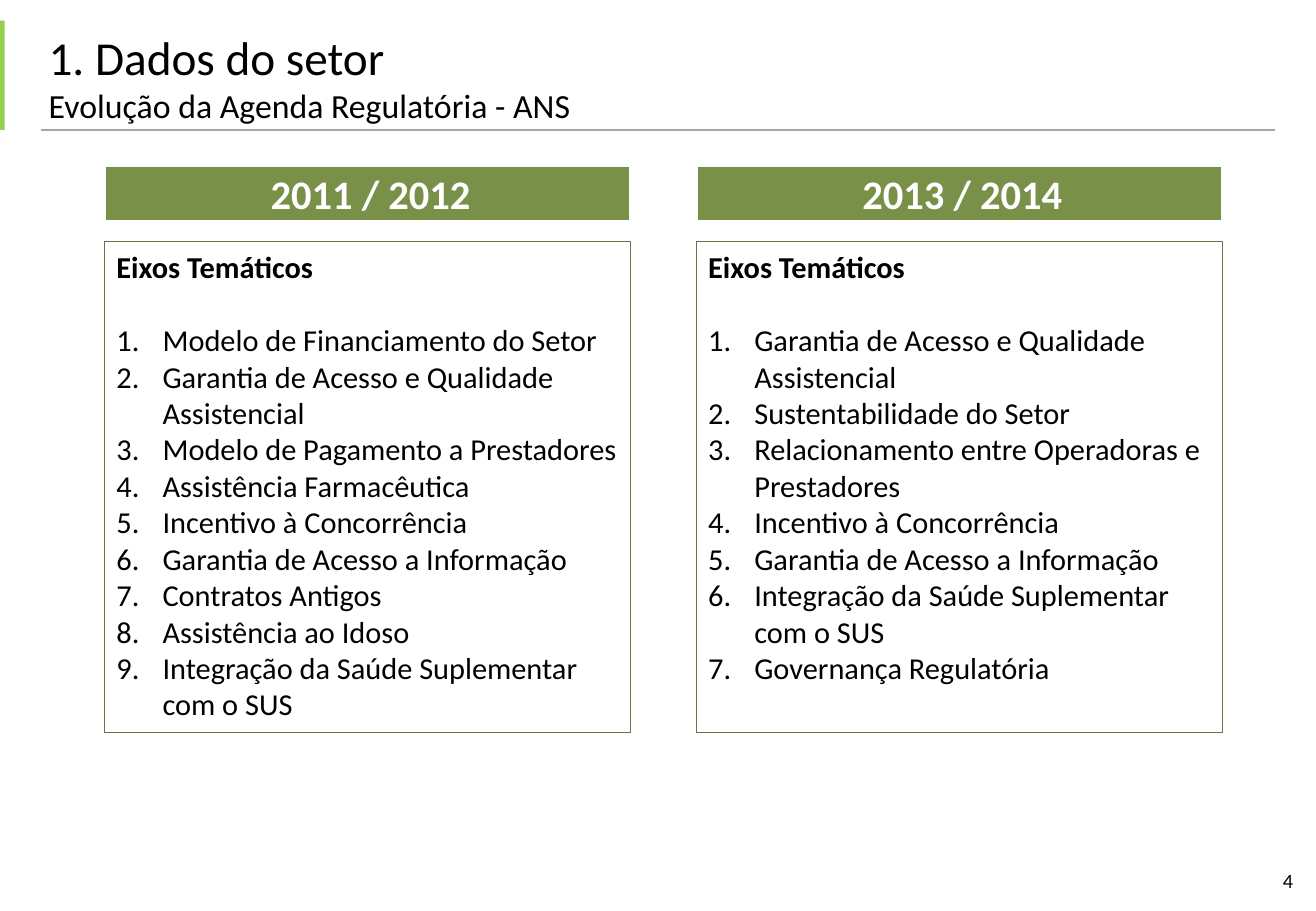
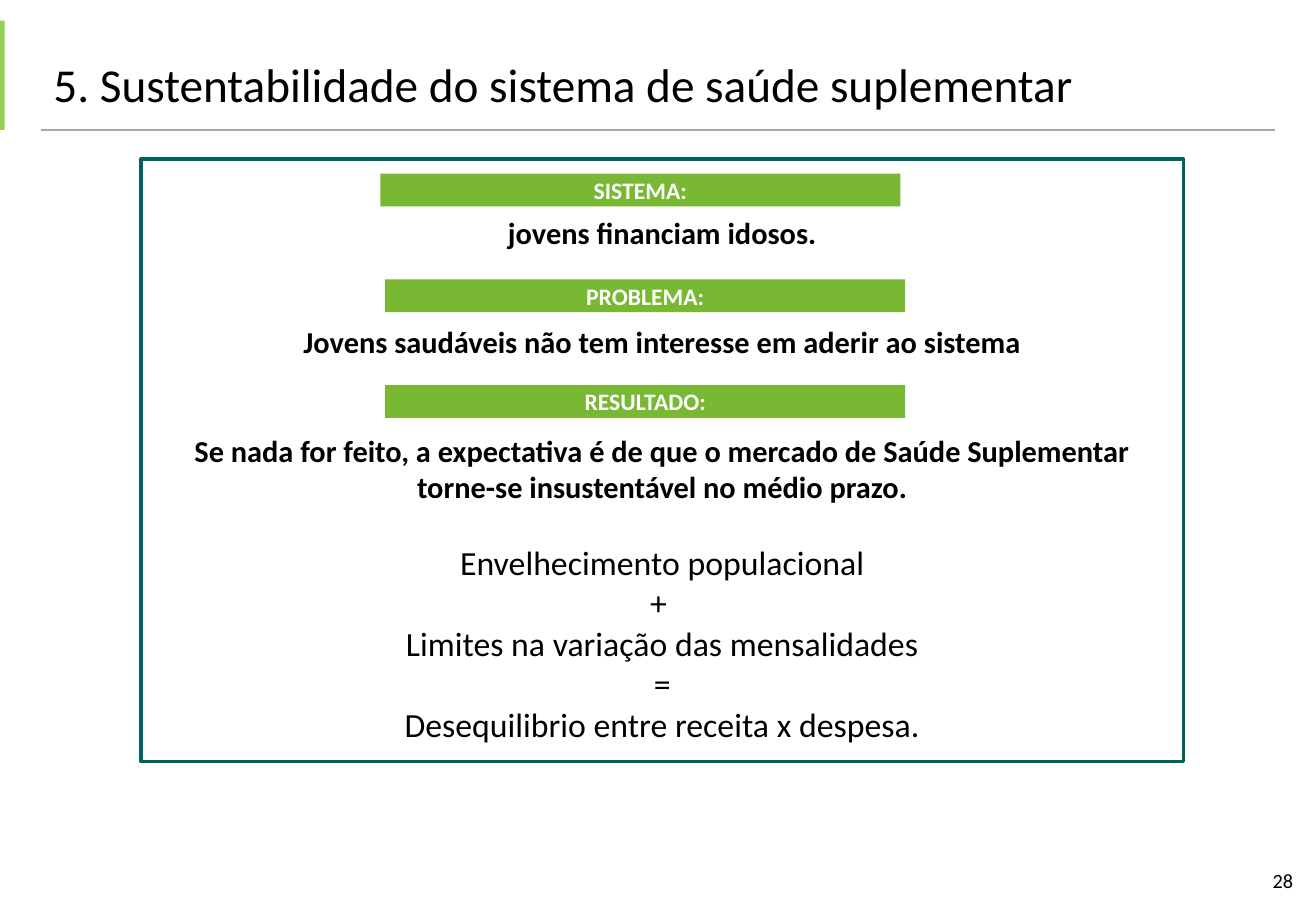
from lxml import etree
from pptx import Presentation
from pptx.dml.color import RGBColor
from pptx.enum import shapes, text
from pptx.oxml.ns import qn
from pptx.util import Inches, Pt

THEME = {
    "font": "Calibri",
    "color": {"ink": "000000", "white": "FFFFFF", "rule": "A6A6A6", "bar": "92D050",
              "band": "789048", "outline": "607848", "label": "78B832", "frame": "006360"},
    "size": {"title": 28, "subtitle": 20, "band": 24, "body": 18,
             "equation": 20, "label": 14, "number": 12},
}
LEFT, CENTER, RIGHT = text.PP_ALIGN.LEFT, text.PP_ALIGN.CENTER, text.PP_ALIGN.RIGHT
TOP, MIDDLE, BOTTOM = text.MSO_ANCHOR.TOP, text.MSO_ANCHOR.MIDDLE, text.MSO_ANCHOR.BOTTOM


def color(name):
    return RGBColor.from_string(THEME["color"][name])


def add_box(s, at, fill=None, line=None, width=0.75, anchor=MIDDLE, margins=(0.1, 0.05, 0.1, 0.05)):
    """Add a rectangle and return its text frame."""
    sp = s.shapes.add_shape(shapes.MSO_SHAPE.RECTANGLE, *map(Inches, at))
    sp.shadow.inherit = False
    if fill:
        sp.fill.solid()
        sp.fill.fore_color.rgb = color(fill)
    else:
        sp.fill.background()
    if line:
        sp.line.color.rgb = color(line)
        sp.line.width = Pt(width)
    else:
        sp.line.fill.background()
    tf = sp.text_frame
    left, top, right, bottom = map(Inches, margins)
    frame = {"word_wrap": True, "vertical_anchor": anchor, "margin_left": left,
             "margin_top": top, "margin_right": right, "margin_bottom": bottom}
    for name, value in frame.items():
        setattr(tf, name, value)
    return tf


def write(tf, words, size, align=LEFT, bold=False, ink="ink", before=0):
    """Write into the empty first paragraph of a frame, or into a new one."""
    p = tf.paragraphs[0] if not tf.text else tf.add_paragraph()
    p.alignment = align
    if before:
        p.space_before = Pt(before)
    r = p.add_run()
    r.text = words
    for name, value in {"name": THEME["font"], "size": Pt(THEME["size"][size]), "bold": bold}.items():
        setattr(r.font, name, value)
    r.font.color.rgb = color(ink)
    return p


prs = Presentation()
prs.slide_width, prs.slide_height = Inches(10.83), Inches(7.5)

# Title, side bar, rule and page number of every slide
pages = [
    {"title": "1. Dados do setor", "subtitle": "Evolução da Agenda Regulatória - ANS",
     "left": 0.3, "anchor": BOTTOM, "number": "4"},
    {"title": "5. Sustentabilidade do sistema de saúde suplementar", "subtitle": None,
     "left": 0.34, "anchor": MIDDLE, "number": "28"},
]
for page in pages:
    s = prs.slides.add_slide(prs.slide_layouts[5])
    rule = s.shapes.add_connector(shapes.MSO_CONNECTOR.STRAIGHT,
                                  Inches(0.34), Inches(1.07), Inches(10.49), Inches(1.07))
    rule.line.color.rgb = color("rule")
    rule.line.width = Pt(0.75)
    etree.SubElement(rule._element.spPr, qn("a:effectLst"))
    add_box(s, (-0.02, 0.17, 0.06, 0.9), fill="bar")

    title = s.shapes.title
    place = {"left": page["left"], "top": 0.29, "width": 9.33, "height": 0.79}
    for name, value in place.items():
        setattr(title, name, Inches(value))
    tf = title.text_frame
    tf.auto_size = text.MSO_AUTO_SIZE.NONE
    tf.vertical_anchor = page["anchor"]
    p = write(tf, page["title"], "title")
    if page["subtitle"]:
        p.add_line_break()
        r = p.add_run()
        r.text = page["subtitle"]
        r.font.name, r.font.size = THEME["font"], Pt(THEME["size"]["subtitle"])
        r.font.color.rgb = color("ink")

    write(add_box(s, (8.21, 7.05, 2.53, 0.4)), page["number"], "number", RIGHT)

agenda, sustainability = prs.slides

# Agenda: one column per period
columns = [
    ("2011 / 2012", [
        "Modelo de Financiamento do Setor",
        "Garantia de Acesso e Qualidade Assistencial",
        "Modelo de Pagamento a Prestadores",
        "Assistência Farmacêutica",
        "Incentivo à Concorrência",
        "Garantia de Acesso a Informação",
        "Contratos Antigos",
        "Assistência ao Idoso",
        "Integração da Saúde Suplementar com o SUS",
    ]),
    ("2013 / 2014", [
        "Garantia de Acesso e Qualidade Assistencial",
        "Sustentabilidade do Setor",
        "Relacionamento entre Operadoras e Prestadores",
        "Incentivo à Concorrência",
        "Garantia de Acesso a Informação",
        "Integração da Saúde Suplementar com o SUS",
        "Governança Regulatória",
    ]),
]
for i, (period, topics) in enumerate(columns):
    x = 0.86 + 4.87 * i
    tf = add_box(agenda, (x, 1.99, 4.33, 4.04), line="outline", anchor=TOP)
    write(tf, "Eixos Temáticos", "body", bold=True)
    for n, topic in enumerate(topics):
        p = write(tf, topic, "body", before=0 if n else 22)
        pPr = p._p.get_or_add_pPr()
        pPr.set("marL", str(Inches(0.38)))
        pPr.set("indent", str(-Inches(0.38)))
        etree.SubElement(pPr, qn("a:buFont"), typeface="+mj-lt")
        etree.SubElement(pPr, qn("a:buAutoNum"), type="arabicPeriod")
    band = add_box(agenda, (x, 1.36, 4.33, 0.47), "band", "white", 2,
                   margins=(0.49, 0.03, 0.44, 0.03))
    write(band, period, "band", CENTER, True, "white")

# Sustainability: framed statements, then the equation
tf = add_box(sustainability, (1.16, 1.31, 8.58, 4.96), line="frame", width=2.25,
             anchor=TOP, margins=(0.1, 0.45, 0.1, 0.04))
statements = [
    ("jovens financiam idosos.", 0),
    ("Jovens saudáveis não tem interesse em aderir ao sistema", 43),
    ("Se nada for feito, a expectativa é de que o mercado de Saúde Suplementar "
     "torne-se insustentável no médio prazo.", 43),
]
for words, before in statements:
    write(tf, words, "body", CENTER, True, before=before)
equation = ["Envelhecimento populacional", "+ ", "Limites na variação das mensalidades",
            "=", "Desequilibrio entre receita x despesa."]
for n, words in enumerate(equation):
    write(tf, words, "equation", CENTER, before=0 if n else 22)

# Labels above the statements
labels = [("SISTEMA:", 3.13), ("PROBLEMA:", 3.17), ("RESULTADO:", 3.17)]
for i, (words, x) in enumerate(labels):
    label = add_box(sustainability, (x, 1.43 + 0.87 * i, 4.28, 0.27), fill="label")
    write(label, words, "label", CENTER, True, "white")

prs.save("out.pptx")
